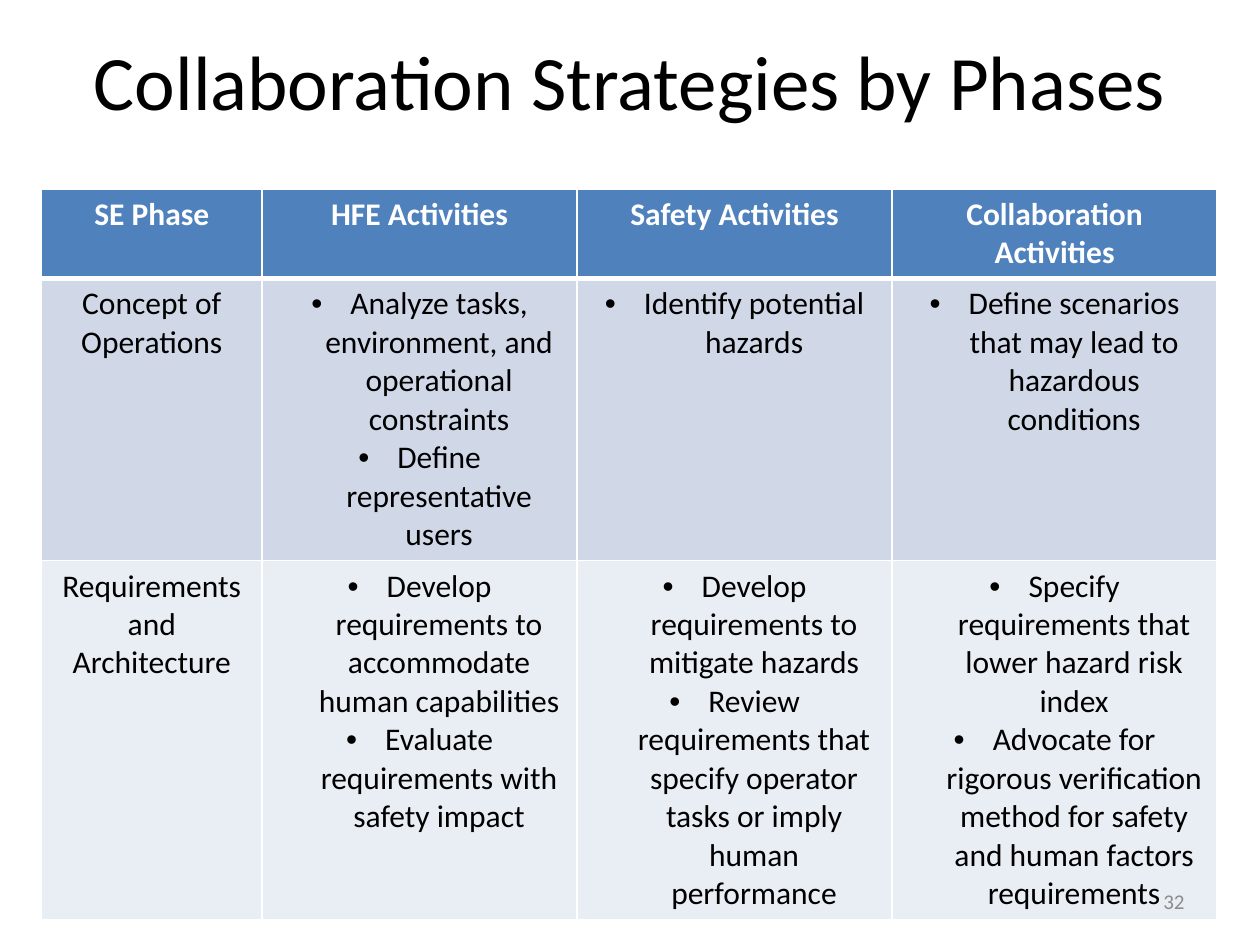
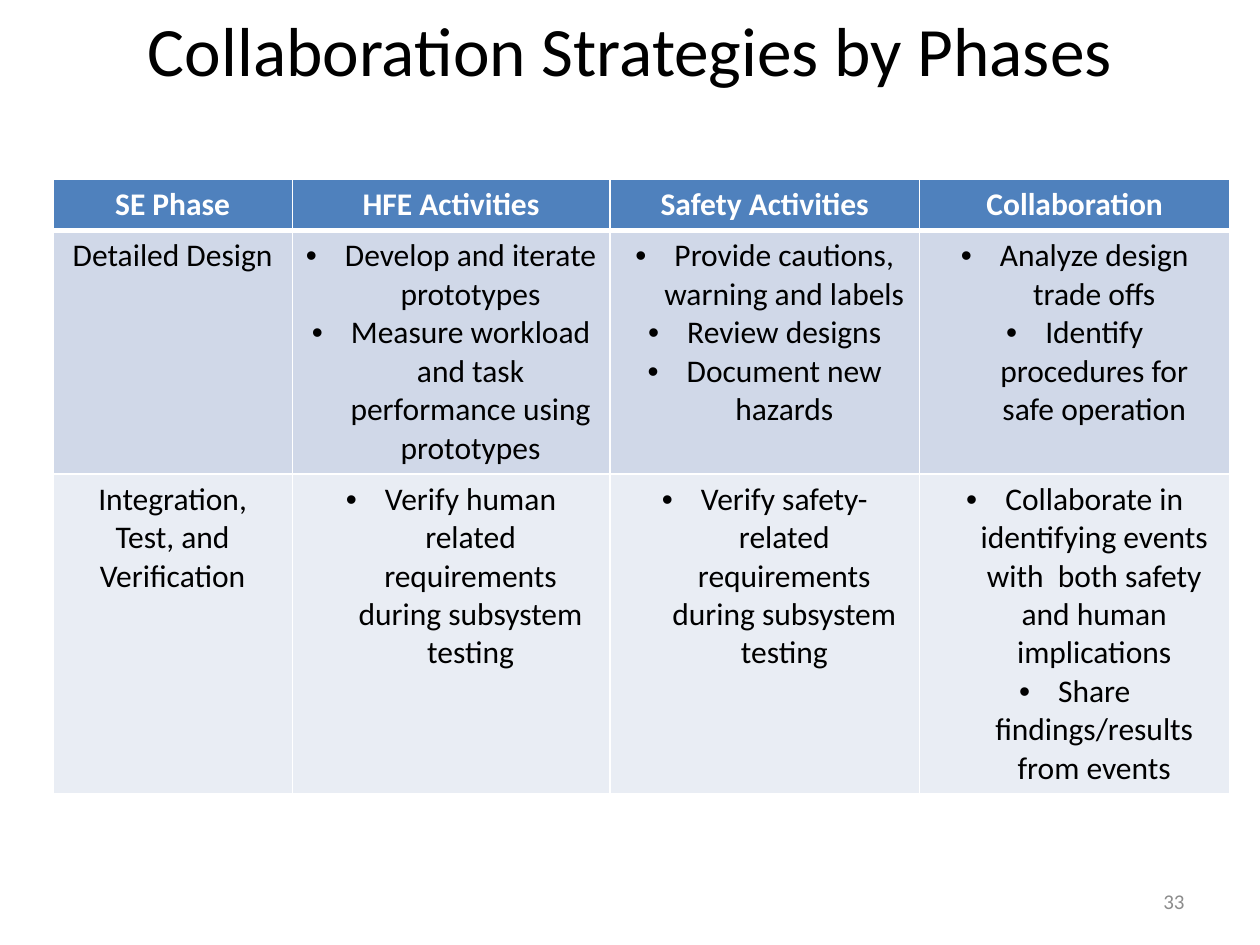
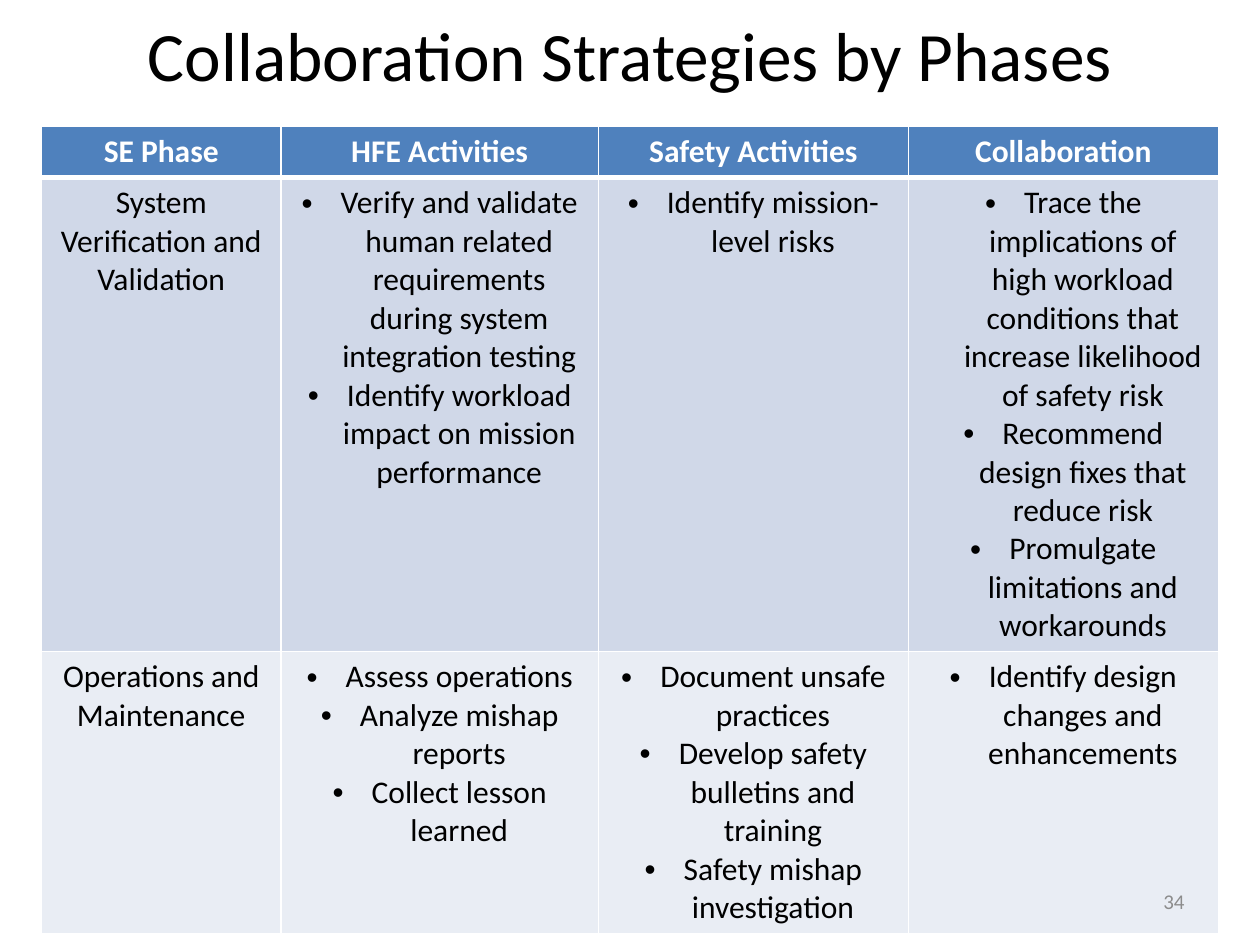
"""Builds three slides of collaboration strategies by systems engineering phase."""
from lxml import etree
from pptx import Presentation
from pptx import util as u
from pptx.dml.color import RGBColor
from pptx.enum import text
from pptx.oxml.ns import qn

FONT = "Calibri"
TITLE = "Collaboration Strategies by Phases"
COLORS = {
    "ink": "000000",
    "paper": "FFFFFF",
    "header": "4F81BD",
    "first_phase": "D0D8E8",
    "second_phase": "E9EDF4",
    "number": "8C8C8C",
}
ROW_FILLS = ["header", "first_phase", "second_phase"]
HEADINGS = ["SE Phase", "HFE Activities", "Safety Activities"]
LATER_WIDTHS = [1.9, 2.52, 2.46, 2.46]
BULLET_INDENT = 0.31

SLIDES = [
    {
        "number": "32",
        "title": (0.01, 1.25, 44),
        "corner": (0.33, 1.5),
        "widths": [1.75, 2.5, 2.5, 2.58],
        "heights": [0.7, 2.24, 2.84],
        "last_heading": "Collaboration Activities",
        "phases": [
            ("Concept of Operations",
             ["Analyze tasks, environment, and operational constraints",
              "Define representative users"],
             ["Identify potential hazards"],
             ["Define scenarios that may lead to hazardous conditions"]),
            ("Requirements and Architecture",
             ["Develop requirements to accommodate human capabilities",
              "Evaluate requirements with safety impact"],
             ["Develop requirements to mitigate hazards",
              "Review requirements that specify operator tasks or imply human performance"],
             ["Specify requirements that lower hazard risk index",
              "Advocate for rigorous verification method for safety and human factors requirements"]),
        ],
    },
    {
        "number": "33",
        "title": (0.02, 0.73, 39.6),
        "corner": (0.42, 1.42),
        "widths": LATER_WIDTHS,
        "heights": [0.41, 1.93, 2.54],
        "last_heading": "Collaboration",
        "phases": [
            ("Detailed Design",
             ["Develop and iterate prototypes",
              "Measure workload and task performance using prototypes"],
             ["Provide cautions, warning and labels", "Review designs",
              "Document new hazards"],
             ["Analyze design trade offs",
              "Identify procedures for safe operation"]),
            ("Integration, Test, and Verification",
             ["Verify human related requirements during subsystem testing"],
             ["Verify safety-related requirements during subsystem testing"],
             ["Collaborate in identifying events with  both safety and human implications",
              "Share findings/results from events"]),
        ],
    },
    {
        "number": "34",
        "title": (0.02, 0.82, 39.6),
        "corner": (0.33, 1),
        "widths": LATER_WIDTHS,
        "heights": [0.41, 3.76, 2.23],
        "last_heading": "Collaboration",
        "phases": [
            ("System Verification and Validation",
             ["Verify and validate human related requirements during system integration testing",
              "Identify workload impact on mission performance"],
             ["Identify mission-level risks"],
             ["Trace the implications of high workload conditions that increase likelihood of safety risk",
              "Recommend design fixes that reduce risk",
              "Promulgate limitations and workarounds"]),
            ("Operations and Maintenance",
             ["Assess operations", "Analyze mishap reports",
              "Collect lesson learned"],
             ["Document unsafe practices",
              "Develop safety bulletins and training",
              "Safety mishap investigation"],
             ["Identify design changes and enhancements"]),
        ],
    },
]


def rgb(name):
    """Return the named colour."""
    return RGBColor.from_string(COLORS[name])


def format_paragraph(paragraph, size, color, bold=False, align=text.PP_ALIGN.CENTER):
    """Align a paragraph and set the font of its runs."""
    paragraph.alignment = align
    for run in paragraph.runs:
        run.font.name = FONT
        run.font.size = u.Pt(size)
        run.font.bold = bold
        run.font.color.rgb = rgb(color)


def add_bullet(paragraph):
    """Give a paragraph a round bullet with a hanging indent."""
    properties = paragraph._p.get_or_add_pPr()
    indent = u.Inches(BULLET_INDENT)
    properties.set("marL", str(indent))
    properties.set("indent", str(-indent))
    etree.SubElement(properties, qn("a:buFont"), typeface="Arial")
    etree.SubElement(properties, qn("a:buChar"), char="•")


def set_borders(cell, top, bottom):
    """Draw white cell borders, with the top and bottom widths in points."""
    properties = cell._tc.get_or_add_tcPr()
    for side, width in (("L", 1), ("R", 1), ("T", top), ("B", bottom)):
        line = etree.SubElement(properties, qn(f"a:ln{side}"), w=str(u.Pt(width)))
        fill = etree.SubElement(line, qn("a:solidFill"))
        etree.SubElement(fill, qn("a:srgbClr"), val=COLORS["paper"])


def fill_cell(cell, content, row):
    """Write a heading, a phase name or a list of activities into a cell."""
    is_header = row == 0
    is_list = isinstance(content, list)
    set_borders(cell, 3 if row == 1 else 1, 3 if is_header else 1)
    cell.fill.solid()
    cell.fill.fore_color.rgb = rgb(ROW_FILLS[row])
    cell.text_frame.text = "\n".join(content) if is_list else content
    for paragraph in cell.text_frame.paragraphs:
        format_paragraph(paragraph, 18, "paper" if is_header else "ink", is_header)
        if is_list:
            add_bullet(paragraph)


def add_title(slide, top, height, size):
    """Place the shared title in the title placeholder."""
    title = slide.shapes.title
    title.left, title.top = u.Inches(0.5), u.Inches(top)
    title.width, title.height = u.Inches(9), u.Inches(height)
    title.text_frame.text = TITLE
    title.text_frame.auto_size = text.MSO_AUTO_SIZE.NONE
    title.text_frame.vertical_anchor = text.MSO_ANCHOR.MIDDLE
    format_paragraph(title.text_frame.paragraphs[0], size, "ink")


def add_phase_table(slide, corner, widths, heights, rows):
    """Add the table of phases and their activities."""
    left, top = corner
    phases = slide.shapes.add_table(
        len(rows), len(widths), u.Inches(left), u.Inches(top),
        u.Inches(sum(widths)), u.Inches(sum(heights))).table
    for column, width in zip(phases.columns, widths):
        column.width = u.Inches(width)
    for row, (height, contents) in enumerate(zip(heights, rows)):
        phases.rows[row].height = u.Inches(height)
        for column, content in enumerate(contents):
            fill_cell(phases.cell(row, column), content, row)


def add_slide_number(slide, number):
    """Add the grey slide number at the lower right."""
    footer = slide.shapes.add_textbox(
        u.Inches(7.17), u.Inches(6.95), u.Inches(2.33), u.Inches(0.4)).text_frame
    footer.word_wrap = True
    footer.vertical_anchor = text.MSO_ANCHOR.MIDDLE
    footer.text = number
    format_paragraph(footer.paragraphs[0], 12, "number", align=text.PP_ALIGN.RIGHT)


def main():
    """Build and save the presentation."""
    deck = Presentation()
    deck.slide_width, deck.slide_height = u.Inches(10), u.Inches(7.5)
    title_only = deck.slide_layouts[5]
    for content in SLIDES:
        slide = deck.slides.add_slide(title_only)
        add_title(slide, *content["title"])
        rows = [HEADINGS + [content["last_heading"]], *content["phases"]]
        add_phase_table(slide, content["corner"], content["widths"],
                        content["heights"], rows)
        add_slide_number(slide, content["number"])
    deck.save("out.pptx")


if __name__ == "__main__":
    main()
